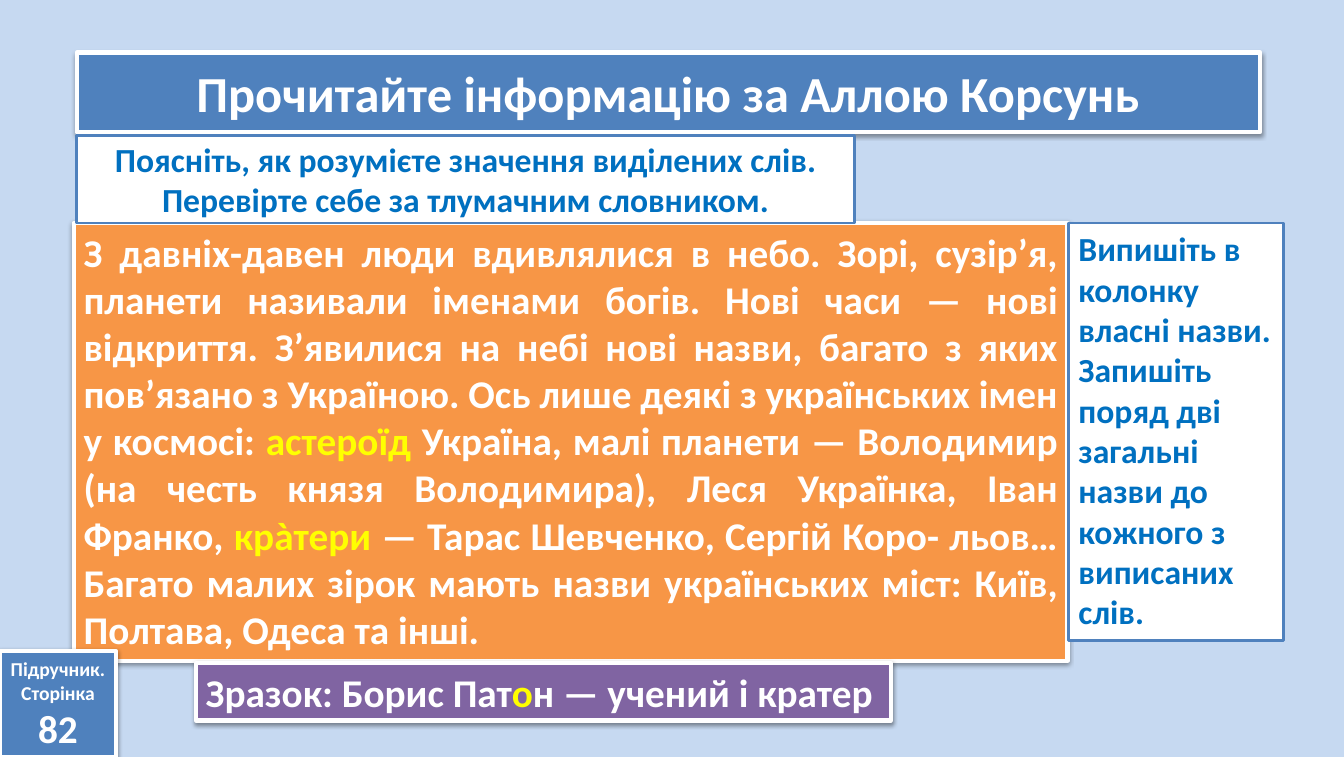
from lxml import etree
from pptx import Presentation
from pptx.dml.color import RGBColor
from pptx.enum.shapes import MSO_SHAPE
from pptx.enum.text import MSO_ANCHOR, MSO_AUTO_SIZE, PP_ALIGN
from pptx.oxml.ns import qn
from pptx.util import Inches, Pt

BLUE, ORANGE, PURPLE, WHITE = "4F81BD", "F79646", "8064A2", "FFFFFF"
TASK_BLUE, HIGHLIGHT, BACKGROUND = "0070C0", "FFFF00", "C6D9F1"

# Within a paragraph, words between asterisks are highlighted.
TITLE = [("Прочитайте інформацію за Аллою Корсунь", 36)]
STORY = [(
    "З давніх-давен люди вдивлялися в небо. Зорі, сузір’я, планети називали "
    "іменами богів. Нові часи — нові відкриття. З’явилися на небі нові назви, "
    "багато з яких пов’язано з Україною. Ось лише деякі з українських імен у "
    "космосі: *астероїд *Україна, малі планети — Володимир (на честь князя "
    "Володимира), Леся Українка, Іван Франко, *крàтери *— Тарас Шевченко, "
    "Сергій Коро- льов… Багато малих зірок мають назви українських міст: "
    "Київ, Полтава, Одеса та інші.", 28)]
PAGE = [("Підручник.", 14), ("Сторінка", 14), ("82", 28)]
EXPLAIN_TASK = [("Поясніть, як розумієте значення виділених слів. "
                 "Перевірте себе за тлумачним словником.", 24)]
WRITE_TASK = [("Випишіть в колонку власні назви. Запишіть поряд дві загальні "
               "назви до кожного з виписаних слів.", 24)]
SAMPLE = [("Зразок: Борис Пат*о*н — учений і кратер", 28)]

CENTERED = dict(align=PP_ALIGN.CENTER, anchor=MSO_ANCHOR.MIDDLE)
BANNERS = [
    (TITLE, (0.76, 0.52, 11.73, 0.79), BLUE, CENTERED),
    (STORY, (0.73, 2.21, 9.85, 4.34), ORANGE, dict(align=PP_ALIGN.JUSTIFY, grow=True)),
    (PAGE, (0, 6.45, 1.15, 1.05), BLUE, CENTERED),
    (SAMPLE, (1.94, 6.57, 6.89, 0.57), PURPLE, dict(grow=True, wrap=False)),
]
TASKS = [
    (EXPLAIN_TASK, (0.76, 1.34, 7.71, 0.87), CENTERED),
    (WRITE_TASK, (10.59, 2.21, 2.13, 4.14), dict(grow=True)),
]


def rgb(value):
    """Turn a hex string into a colour."""
    return RGBColor.from_string(value)


def add_box(slide, place, fill, line, width):
    """Add a flat rectangle with a fill and an outline."""
    shape = slide.shapes.add_shape(MSO_SHAPE.RECTANGLE, *map(Inches, place))
    shape.shadow.inherit = False
    shape.fill.solid()
    shape.fill.fore_color.rgb = rgb(fill)
    shape.line.color.rgb = rgb(line)
    shape.line.width = Pt(width)
    return shape


def add_shadow(shape):
    """Give a shape a soft shadow below it."""
    effects = shape.element.spPr.find(qn("a:effectLst"))
    shadow = etree.SubElement(effects, qn("a:outerShdw"), blurRad=str(Pt(3.1)),
                              dist=str(Pt(1.6)), dir="5400000", rotWithShape="0")
    color = etree.SubElement(shadow, qn("a:srgbClr"), val="000000")
    etree.SubElement(color, qn("a:alpha"), val="38000")


def write_text(shape, text, color=WHITE, align=PP_ALIGN.LEFT,
               anchor=MSO_ANCHOR.TOP, grow=False, wrap=True):
    """Write bold paragraphs, highlighting the marked words."""
    frame = shape.text_frame
    frame.word_wrap = wrap
    frame.auto_size = MSO_AUTO_SIZE.SHAPE_TO_FIT_TEXT if grow else MSO_AUTO_SIZE.NONE
    frame.vertical_anchor = anchor
    for index, (content, size) in enumerate(text):
        paragraph = frame.add_paragraph() if index else frame.paragraphs[0]
        paragraph.alignment = align
        for part, words in enumerate(content.split("*")):
            run = paragraph.add_run()
            run.text = words
            run.font.name = "Calibri"
            run.font.size = Pt(size)
            run.font.bold = True
            run.font.color.rgb = rgb(HIGHLIGHT if part % 2 else color)


def main():
    """Build and save the slide."""
    presentation = Presentation()
    presentation.slide_width = Inches(13.32)
    presentation.slide_height = Inches(7.5)
    slide = presentation.slides.add_slide(presentation.slide_layouts[6])
    slide.background.fill.solid()
    slide.background.fill.fore_color.rgb = rgb(BACKGROUND)
    for text, place, fill, style in BANNERS:
        shape = add_box(slide, place, fill, WHITE, 3)
        add_shadow(shape)
        write_text(shape, text, **style)
    for text, place, style in TASKS:
        shape = add_box(slide, place, WHITE, BLUE, 2)
        write_text(shape, text, color=TASK_BLUE, **style)
    presentation.save("out.pptx")


if __name__ == "__main__":
    main()
